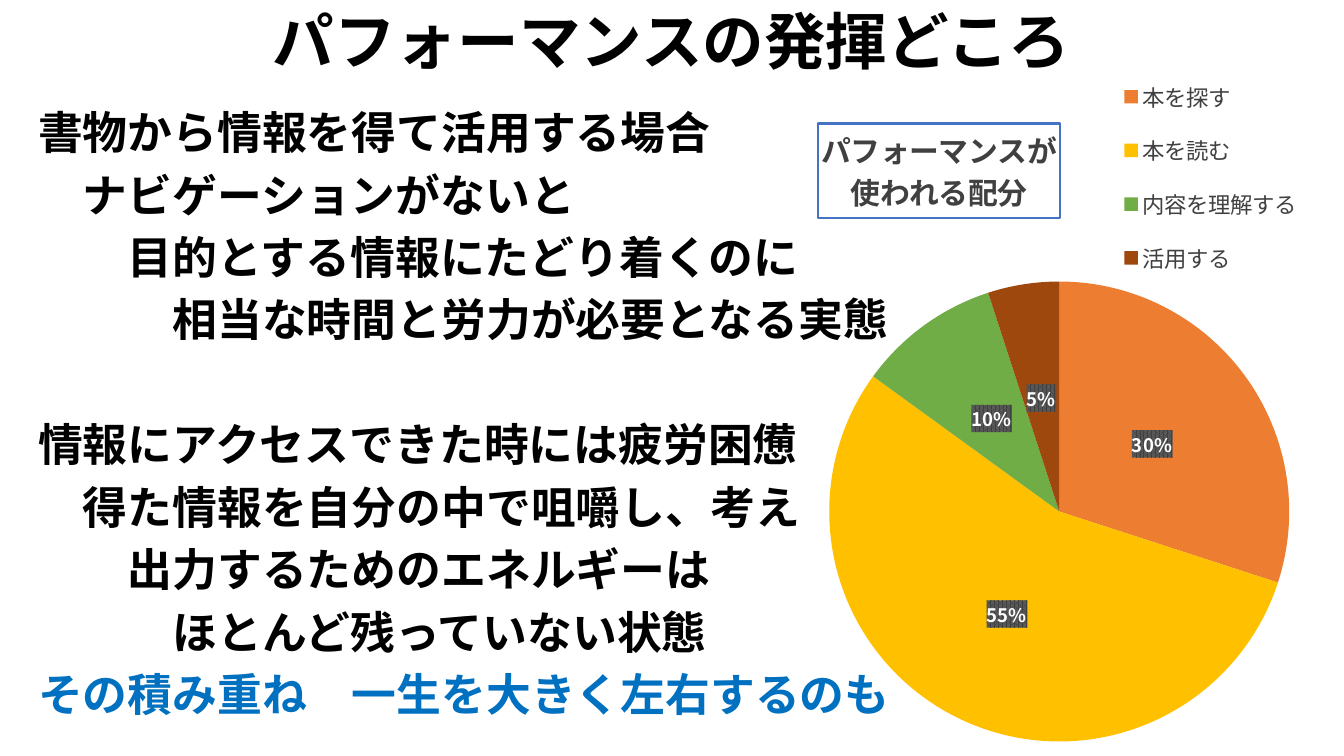
from lxml import etree
from pptx import Presentation
from pptx.chart.data import CategoryChartData
from pptx.dml.color import RGBColor
from pptx.enum.chart import XL_CHART_TYPE, XL_LABEL_POSITION, XL_LEGEND_POSITION
from pptx.enum.text import MSO_ANCHOR, MSO_AUTO_SIZE, PP_ALIGN
from pptx.oxml import parse_xml
from pptx.oxml.ns import nsdecls, qn
from pptx.util import Pt

PIE = XL_CHART_TYPE.PIE
LABEL_CENTER = XL_LABEL_POSITION.CENTER
LEGEND_RIGHT = XL_LEGEND_POSITION.RIGHT
TOP, MIDDLE = MSO_ANCHOR.TOP, MSO_ANCHOR.MIDDLE
NO_AUTOFIT = MSO_AUTO_SIZE.NONE
LEFT, CENTER = PP_ALIGN.LEFT, PP_ALIGN.CENTER

FONT = "Noto Sans CJK JP"
BLACK = RGBColor(0x00, 0x00, 0x00)
WHITE = RGBColor(0xFF, 0xFF, 0xFF)
GRAY = RGBColor(0x40, 0x40, 0x40)
BLUE = RGBColor(0x00, 0x70, 0xC0)
FRAME_BLUE = RGBColor(0x44, 0x72, 0xC4)
ORANGE = RGBColor(0xED, 0x7D, 0x31)
YELLOW = RGBColor(0xFF, 0xC0, 0x00)
GREEN = RGBColor(0x70, 0xAD, 0x47)
BROWN = RGBColor(0x9E, 0x48, 0x0E)

INDENT_STEP = 32
PARAGRAPH_GAP = 10
SECTION_GAP = 54.6


def style_font(font, size, color, bold):
    font.name = FONT
    font.size = Pt(size)
    font.bold = bold
    font.color.rgb = color


def place_in_chart(part, index, **fractions):
    for old in part.findall(qn("c:layout")):
        part.remove(old)
    layout = etree.Element(qn("c:layout"))
    manual = etree.SubElement(layout, qn("c:manualLayout"))
    if part.tag == qn("c:plotArea"):
        etree.SubElement(manual, qn("c:layoutTarget")).set("val", "inner")
    for mode in ("xMode", "yMode"):
        etree.SubElement(manual, qn(f"c:{mode}")).set("val", "edge")
    for key, fraction in fractions.items():
        etree.SubElement(manual, qn(f"c:{key}")).set("val", str(fraction))
    part.insert(index, layout)


presentation = Presentation()
presentation.slide_width = Pt(960)
presentation.slide_height = Pt(540)
slide = presentation.slides.add_slide(presentation.slide_layouts[1])

heading = slide.shapes.title
heading.left, heading.top, heading.width, heading.height = Pt(66), Pt(1.5), Pt(828), Pt(61)
heading.text_frame.auto_size = NO_AUTOFIT
heading.text_frame.vertical_anchor = MIDDLE
heading_line = heading.text_frame.paragraphs[0]
heading_line.alignment = CENTER
heading_line.line_spacing = 0.9
heading_run = heading_line.add_run()
heading_run.text = "パフォーマンスの発揮どころ"
style_font(heading_run.font, 44, BLACK, True)

statements = [
    ("書物から情報を得て活用する場合", 0, PARAGRAPH_GAP, BLACK),
    ("ナビゲーションがないと", 1, PARAGRAPH_GAP, BLACK),
    ("目的とする情報にたどり着くのに", 2, PARAGRAPH_GAP, BLACK),
    ("相当な時間と労力が必要となる実態", 3, PARAGRAPH_GAP, BLACK),
    ("情報にアクセスできた時には疲労困憊", 0, SECTION_GAP, BLACK),
    ("得た情報を自分の中で咀嚼し、考え", 1, PARAGRAPH_GAP, BLACK),
    ("出力するためのエネルギーは", 2, PARAGRAPH_GAP, BLACK),
    ("ほとんど残っていない状態", 3, PARAGRAPH_GAP, BLACK),
    ("その積み重ね\u3000一生を大きく左右するのも".replace("\u3000", "　"), 0, PARAGRAPH_GAP, BLUE),
]
body = slide.placeholders[1]
body.left, body.top, body.width, body.height = Pt(20), Pt(75.6), Pt(667.5), Pt(437.8)
body.text_frame.auto_size = NO_AUTOFIT
body.text_frame.vertical_anchor = TOP
for number, (wording, step, gap, color) in enumerate(statements):
    line = body.text_frame.paragraphs[0] if number == 0 else body.text_frame.add_paragraph()
    line.alignment = LEFT
    line.line_spacing = 0.9
    line.space_before = Pt(gap)
    line.space_after = Pt(0)
    properties = line._p.get_or_add_pPr()
    properties.set("marL", str(Pt(step * INDENT_STEP)))
    properties.set("indent", "0")
    etree.SubElement(properties, qn("a:buNone"))
    run = line.add_run()
    run.text = wording
    style_font(run.font, 32, color, True)

shares = [
    ("本を探す", 30, ORANGE),
    ("本を読む", 55, YELLOW),
    ("内容を理解する", 10, GREEN),
    ("活用する", 5, BROWN),
]
share_data = CategoryChartData()
share_data.categories = [activity for activity, _, _ in shares]
share_data.add_series("Series 1", [share for _, share, _ in shares])
chart = slide.shapes.add_chart(
    PIE, Pt(573), Pt(26.6), Pt(386.6), Pt(513.4), share_data
).chart
style_font(chart.font, 10, BLACK, False)

caption = chart.chart_title
for number, wording in enumerate(["パフォーマンスが", "使われる配分"]):
    frame = caption.text_frame
    line = frame.paragraphs[0] if number == 0 else frame.add_paragraph()
    line.alignment = CENTER
    run = line.add_run()
    run.text = wording
    style_font(run.font, 21.3, GRAY, True)
caption.format.fill.background()
caption.format.line.color.rgb = FRAME_BLUE
caption.format.line.width = Pt(1.5)
place_in_chart(caption._element, 1, x=0.03, y=0.12)

chart.has_legend = True
legend = chart.legend
legend.position = LEGEND_RIGHT
legend.include_in_layout = False
style_font(legend.font, 16, GRAY, False)
place_in_chart(legend._element, 1, x=0.58, y=0.03, w=0.35, h=0.33)

plot = chart.plots[0]
plot.vary_by_categories = True
place_in_chart(chart._chartSpace.chart.plotArea, 0, x=0.05, y=0.34, w=0.85, h=0.64)
series = plot.series[0]
for number, (_, _, color) in enumerate(shares):
    slice_fill = series.points[number].format.fill
    slice_fill.solid()
    slice_fill.fore_color.rgb = color

labels = series.data_labels
labels.show_percentage = True
labels.show_value = False
labels.position = LABEL_CENTER
style_font(labels.font, 13.3, WHITE, True)
label_fill = parse_xml(
    f'<c:spPr {nsdecls("c", "a")}><a:pattFill prst="pct75">'
    f'<a:fgClr><a:srgbClr val="{GRAY}"/></a:fgClr>'
    '<a:bgClr><a:srgbClr val="595959"/></a:bgClr></a:pattFill></c:spPr>'
)
labels._element.find(qn("c:txPr")).addprevious(label_fill)

for tree in (slide._element, chart._chartSpace):
    for latin in list(tree.iter(qn("a:latin"))):
        east_asian = etree.Element(qn("a:ea"))
        east_asian.set("typeface", FONT)
        latin.addnext(east_asian)

presentation.save("out.pptx")
